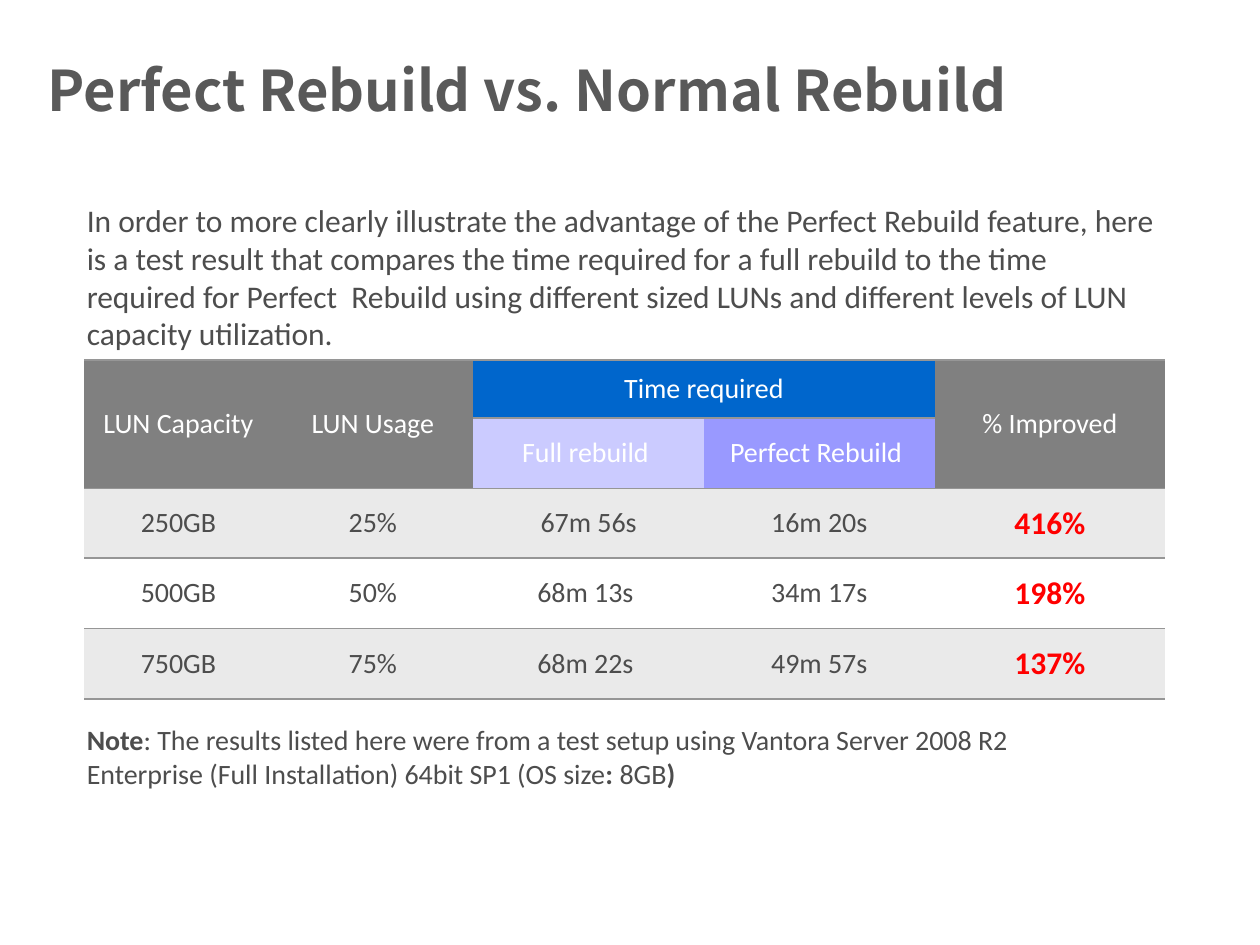
import pptx
import pptx.util
import pptx.enum.text
import pptx.dml.color
import pptx.oxml
import pptx.oxml.ns
import lxml.etree

Cm = pptx.util.Cm
MID = pptx.enum.text.MSO_ANCHOR.MIDDLE
CENTER = pptx.enum.text.PP_ALIGN.CENTER
COLORS = {
    "title": "595959", "text": "4D4D4D", "white": "FFFFFF", "red": "FF0000",
    "head": "808080", "time": "0066CC", "sub": "9999FF", "band": "EAEAEA",
    "rule": "969696",
}


def color(name):
    return pptx.dml.color.RGBColor.from_string(COLORS[name])


def write(para, text, size=16, font="Calibri", tone="text", bold=False, align=None):
    """Add one formatted run to a paragraph."""
    run = para.add_run()
    run.text = text
    run.font.size = pptx.util.Pt(size)
    run.font.name = font
    run.font.bold = bold
    run.font.color.rgb = color(tone)
    if align is not None:
        para.alignment = align


class Deck:
    def __init__(self):
        self.prs = pptx.Presentation()
        self.prs.slide_width, self.prs.slide_height = Cm(25.4), Cm(19.05)
        self.slide = self.prs.slides.add_slide(self.prs.slide_layouts[6])

    def text(self, left, top, width, height, runs, space=None, **style):
        """Add a box with one paragraph; runs are (text, bold) pairs."""
        box = self.slide.shapes.add_textbox(Cm(left), Cm(top), Cm(width), Cm(height))
        frame = box.text_frame
        frame.word_wrap = True
        frame.vertical_anchor = MID
        para = frame.paragraphs[0]
        if space:
            para.line_spacing = space
        for text, bold in runs:
            write(para, text, bold=bold, **style)

    def grid(self, left, top, cols, rows):
        """Add a plain table with the given column widths and row heights."""
        table = self.slide.shapes.add_table(
            len(rows), len(cols), Cm(left), Cm(top), Cm(sum(cols)), Cm(sum(rows))).table
        table.first_row = table.horz_banding = False
        for col, width in zip(table.columns, cols):
            col.width = Cm(width)
        for row, height in zip(table.rows, rows):
            row.height = Cm(height)
        return table

    def cell(self, cell, text, fill, alpha=None, **style):
        cell.fill.solid()
        cell.fill.fore_color.rgb = color(fill)
        cell.vertical_anchor = MID
        props = cell._tc.get_or_add_tcPr()
        if alpha:
            tone = props.find(".//" + pptx.oxml.ns.qn("a:srgbClr"))
            lxml.etree.SubElement(tone, pptx.oxml.ns.qn("a:alpha"), val=str(alpha * 1000))
        # Rules above and below, none at the sides
        rule = f'<a:solidFill><a:srgbClr val="{COLORS["rule"]}"/></a:solidFill>'
        for spot, side in enumerate("LRTB"):
            paint = rule if side in "TB" else "<a:noFill/>"
            props.insert(spot, pptx.oxml.parse_xml(
                f'<a:ln{side} {pptx.oxml.ns.nsdecls("a")} w="12700">{paint}</a:ln{side}>'))
        if text:
            write(cell.text_frame.paragraphs[0], text, align=CENTER, **style)


def main():
    deck = Deck()

    # Title and introduction
    deck.text(0.71, 0.91, 20.68, 1.93, [("Perfect Rebuild vs. Normal Rebuild", True)],
              space=0.9, size=32, font="Noto Sans CJK SC", tone="title")
    deck.text(1.5, 3.91, 22.2, 3.33, [(
        "In order to more clearly illustrate the advantage of the Perfect Rebuild feature, "
        "here is a test result that compares the time required for a full rebuild to the "
        "time required for Perfect  Rebuild using different sized LUNs and different levels "
        "of LUN capacity utilization.", False)], size=18)

    # Note below the table
    deck.text(1.5, 14.43, 21.39, 1.63, [
        ("Note", True),
        (": The results listed here were from a test setup using Vantora Server 2008 R2 "
         "Enterprise (Full Installation) 64bit SP1 (OS size", False),
        (": ", True), ("8GB", False), (")", True)])

    # Table header: two rows, with merged cells
    table = deck.grid(1.7, 7.26, [3.92] * 2 + [4.65] * 3, [1.17, 1.42, 1.4, 1.42, 1.42])
    heads = [
        [("LUN Capacity ", "head"), ("LUN Usage ", "head"), ("Time required", "time"),
         ("", "time"), ("% Improved", "head")],
        [("", "head"), ("", "head"), ("Full rebuild ", "sub", 50),
         ("Perfect Rebuild ", "sub"), ("", "head")],
    ]
    for r, row in enumerate(heads):
        for c, item in enumerate(row):
            deck.cell(table.cell(r, c), *item, tone="white")
    for c in (0, 1, 4):
        table.cell(0, c).merge(table.cell(1, c))
    table.cell(0, 2).merge(table.cell(0, 3))

    # Table body: striped rows, last column stressed
    body = [
        ["250GB ", "25% ", "67m 56s", "16m 20s", "416%"],
        ["500GB ", "50% ", "68m 13s ", "34m 17s", "198%"],
        ["750GB ", "75% ", "68m 22s ", "49m 57s", "137%"],
    ]
    stress = dict(size=18, tone="red", bold=True)
    for r, row in enumerate(body):
        fill = "white" if r % 2 else "band"
        for c, text in enumerate(row):
            deck.cell(table.cell(r + 2, c), text, fill, **(stress if c == 4 else {}))

    deck.prs.save("out.pptx")


if __name__ == "__main__":
    main()
